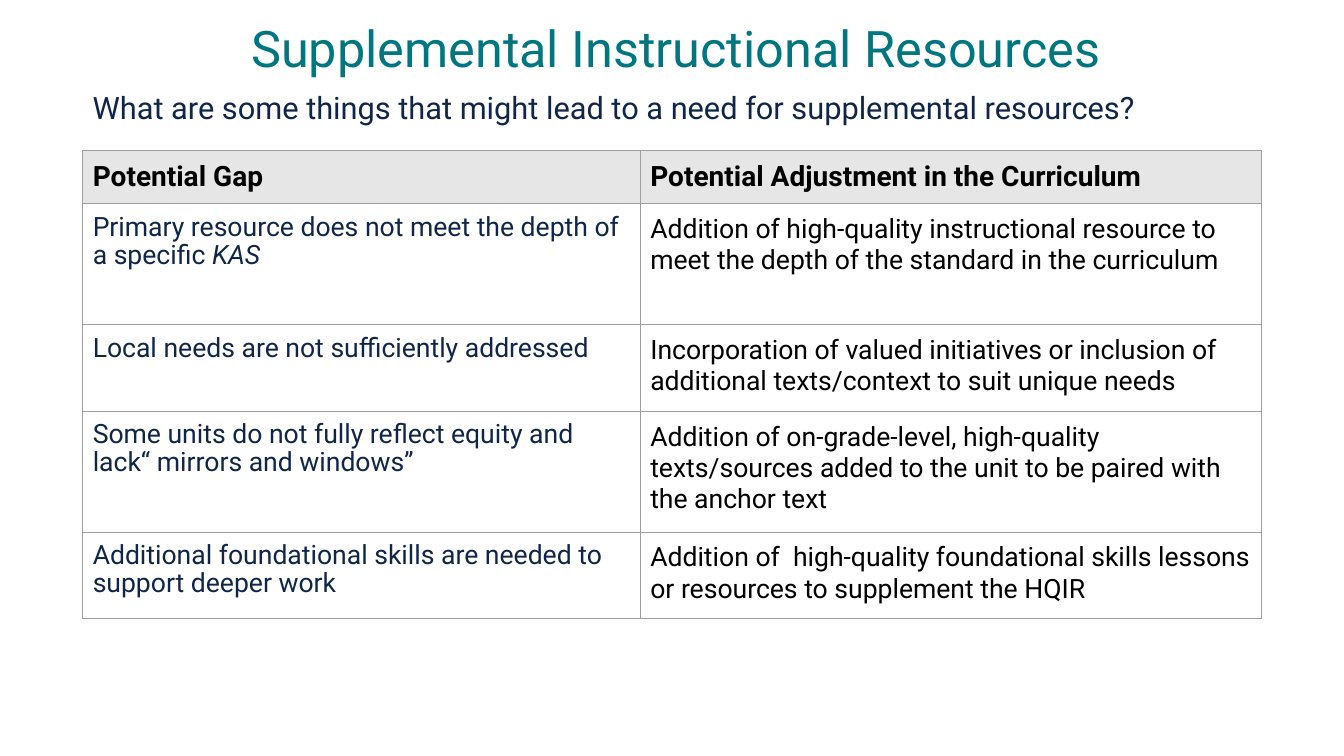
from dataclasses import dataclass

from lxml import etree
from pptx import Presentation
from pptx import util as u
from pptx.dml.color import RGBColor
from pptx.enum import text
from pptx.oxml.ns import qn


@dataclass(frozen=True)
class Theme:
    font: str = "Roboto"
    teal: str = "007780"
    navy: str = "102649"
    black: str = "000000"
    white: str = "FFFFFF"
    header_fill: str = "E7E6E6"
    border: str = "9E9E9E"
    title_size: int = 36
    question_size: int = 22
    header_size: int = 20
    cell_size: int = 19
    tight: float = 0.9
    border_width: float = 0.75


THEME = Theme()

COLUMN_WIDTHS = (5.53, 6.16)
ROW_HEIGHTS = (0.53, 1.2, 0.86, 1.2, 0.86)
HEADERS = ("Potential Gap", "Potential Adjustment in the Curriculum")

# Each row: runs of the gap as (wording, italic), then the adjustment
GAPS = (
    ((("Primary resource does not meet the depth of a specific ", False),
      ("KAS", True)),
     "Addition of high-quality instructional resource to meet the depth "
     "of the standard in the curriculum"),
    ((("Local needs are not sufficiently addressed", False),),
     "Incorporation of valued initiatives or inclusion of additional "
     "texts/context to suit unique needs"),
    ((("Some units do not fully reflect equity and "
       "lack“ mirrors and windows”", False),),
     "Addition of on-grade-level, high-quality texts/sources added to the "
     "unit to be paired with the anchor text"),
    ((("Additional foundational skills are needed to support deeper work",
       False),),
     "Addition of  high-quality foundational skills lessons or resources "
     "to supplement the HQIR"),
)


def write(frame, runs, size, color, bold=False, spacing=1.0,
          align=text.PP_ALIGN.LEFT):
    """Fill the first paragraph of a frame with (wording, italic) runs."""
    paragraph = frame.paragraphs[0]
    paragraph.alignment = align
    paragraph.line_spacing = spacing
    paragraph.space_before = u.Pt(0)
    for wording, italic in runs:
        run = paragraph.add_run()
        run.text = wording
        run.font.name = THEME.font
        run.font.size = u.Pt(size)
        run.font.color.rgb = RGBColor.from_string(color)
        run.font.bold = bold
        run.font.italic = italic


def set_insets(frame):
    frame.margin_left = frame.margin_right = u.Inches(0.1)
    frame.margin_top = frame.margin_bottom = u.Inches(0.05)
    frame.word_wrap = True
    frame.auto_size = text.MSO_AUTO_SIZE.NONE


def add_title(slide, wording):
    title = slide.shapes.title
    title.left, title.top = u.Inches(0.69), u.Inches(0.13)
    title.width, title.height = u.Inches(12.03), u.Inches(0.75)
    set_insets(title.text_frame)
    title.text_frame.vertical_anchor = text.MSO_ANCHOR.MIDDLE
    write(title.text_frame, [(wording, False)], THEME.title_size, THEME.teal,
          spacing=THEME.tight, align=text.PP_ALIGN.CENTER)


def add_question(slide, wording):
    question = slide.shapes.add_textbox(
        u.Inches(0.82), u.Inches(0.87), u.Inches(11.69), u.Inches(0.55))
    set_insets(question.text_frame)
    write(question.text_frame, [(wording, False)], THEME.question_size,
          THEME.navy, spacing=THEME.tight)


def style_cell(cell, fill):
    cell.margin_left = cell.margin_right = u.Inches(0.1)
    cell.margin_top = cell.margin_bottom = u.Inches(0.1)
    cell.vertical_anchor = text.MSO_ANCHOR.TOP
    # Borders go before the fill in the cell properties
    properties = cell._tc.get_or_add_tcPr()
    for side in ("a:lnL", "a:lnR", "a:lnT", "a:lnB"):
        line = etree.SubElement(properties, qn(side),
                                w=str(u.Pt(THEME.border_width)))
        solid = etree.SubElement(line, qn("a:solidFill"))
        etree.SubElement(solid, qn("a:srgbClr"), val=THEME.border)
    cell.fill.solid()
    cell.fill.fore_color.rgb = RGBColor.from_string(fill)


def add_gap_table(slide):
    table = slide.shapes.add_table(
        len(ROW_HEIGHTS), len(COLUMN_WIDTHS), u.Inches(0.82), u.Inches(1.49),
        u.Inches(sum(COLUMN_WIDTHS)), u.Inches(sum(ROW_HEIGHTS))).table
    table.horz_banding = False
    for column, width in zip(table.columns, COLUMN_WIDTHS):
        column.width = u.Inches(width)
    for row, height in zip(table.rows, ROW_HEIGHTS):
        row.height = u.Inches(height)

    # Header row
    for cell, header in zip(table.rows[0].cells, HEADERS):
        style_cell(cell, THEME.header_fill)
        write(cell.text_frame, [(header, False)], THEME.header_size,
              THEME.black, bold=True)

    # Gaps and their adjustments
    for index, (gap_runs, adjustment) in enumerate(GAPS, start=1):
        gap_cell, adjustment_cell = table.rows[index].cells
        style_cell(gap_cell, THEME.white)
        write(gap_cell.text_frame, gap_runs, THEME.cell_size, THEME.navy,
              spacing=THEME.tight)
        style_cell(adjustment_cell, THEME.white)
        write(adjustment_cell.text_frame, [(adjustment, False)],
              THEME.cell_size, THEME.black)


def main():
    deck = Presentation()
    deck.slide_width, deck.slide_height = u.Inches(13.33), u.Inches(7.5)
    slide = deck.slides.add_slide(deck.slide_layouts.get_by_name("Title Only"))
    add_title(slide, "Supplemental Instructional Resources")
    add_question(slide, "What are some things that might lead to a need "
                        "for supplemental resources?")
    add_gap_table(slide)
    deck.save("out.pptx")


if __name__ == "__main__":
    main()
